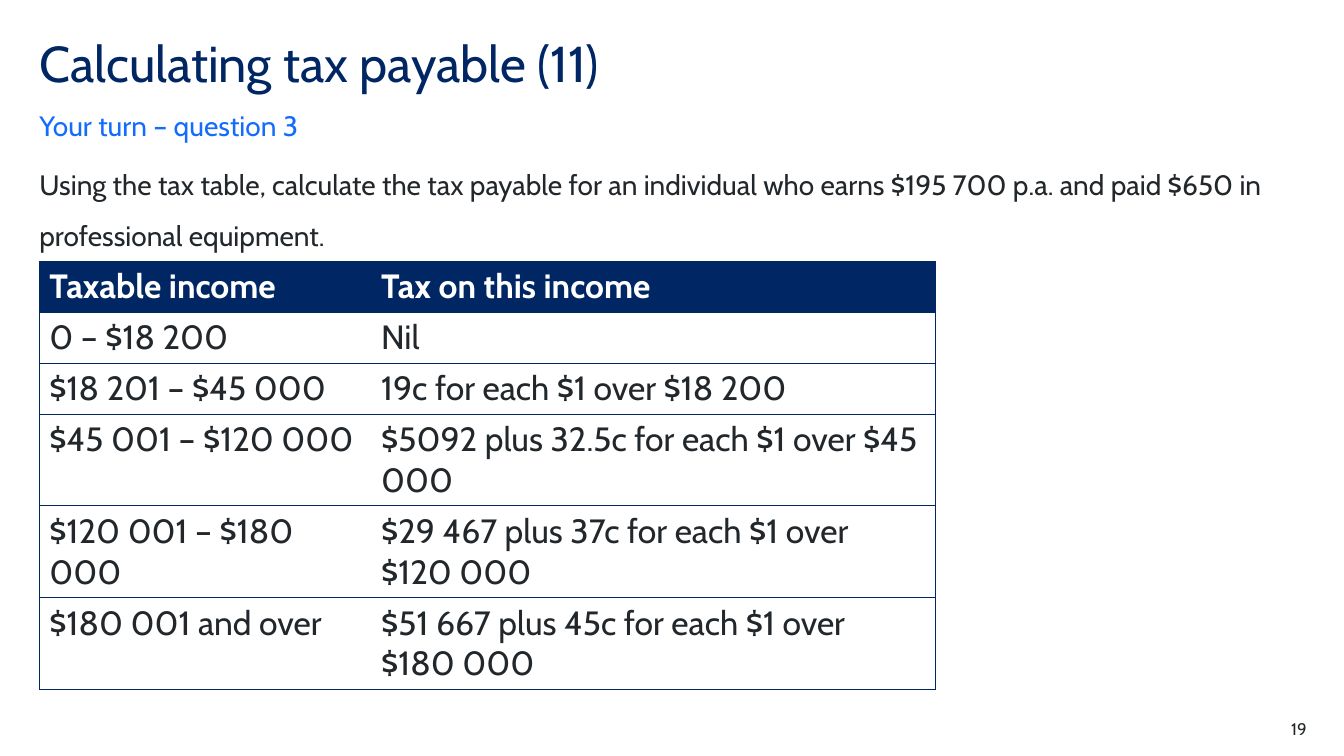
from lxml import etree
from pptx import Presentation
from pptx import util as u
from pptx.dml.color import RGBColor
from pptx.enum import text as t
from pptx.oxml.ns import qn

# Content
TITLE = "Calculating tax payable (11)"
SUBTITLE = "Your turn – question 3"
QUESTION = ("Using the tax table, calculate the tax payable for an individual who earns "
            "$195 700 p.a. and paid $650 in professional equipment.")
TAX_TABLE = [
    ("Taxable income", "Tax on this income"),
    ("0 – $18 200", "Nil"),
    ("$18 201 – $45 000", "19c for each $1 over $18 200"),
    ("$45 001 – $120 000", "$5092 plus 32.5c for each $1 over $45 000"),
    ("$120 001 – $180 000", "$29 467 plus 37c for each $1 over $120 000"),
    ("$180 001 and over", "$51 667 plus 45c for each $1 over $180 000"),
]
PAGE_NUMBER = "19"

# Style
FONT = "Cabin"
NAVY = RGBColor(0x00, 0x26, 0x64)
BLUE = RGBColor(0x14, 0x6C, 0xFD)
INK = RGBColor(0x22, 0x27, 0x2B)
WHITE = RGBColor(0xFF, 0xFF, 0xFF)
LEFT = 0.39
COLUMN_WIDTHS = (3.29, 5.6)
ROW_HEIGHT = 0.41


def write(frame, words, size, color, bold=False, align=t.PP_ALIGN.LEFT, spacing=None):
    paragraph = frame.paragraphs[0]
    paragraph.alignment = align
    if spacing:
        paragraph.line_spacing = spacing
    run = paragraph.add_run()
    run.text = words
    run.font.name = FONT
    run.font.size = u.Pt(size)
    run.font.bold = bold
    run.font.color.rgb = color


def set_up(frame, anchor=t.MSO_ANCHOR.TOP):
    frame.margin_left = frame.margin_right = frame.margin_top = frame.margin_bottom = 0
    frame.word_wrap = True
    frame.auto_size = t.MSO_AUTO_SIZE.NONE
    frame.vertical_anchor = anchor
    return frame


def add_text(slide, box, anchor=t.MSO_ANCHOR.TOP):
    return set_up(slide.shapes.add_textbox(*map(u.Inches, box)).text_frame, anchor)


def set_borders(cell, visible_sides):
    properties = cell._tc.get_or_add_tcPr()
    for position, side in enumerate("LRTB"):
        line = etree.Element(qn(f"a:ln{side}"), w=str(u.Pt(0.5)))
        if side in visible_sides:
            fill = etree.SubElement(line, qn("a:solidFill"))
            etree.SubElement(fill, qn("a:srgbClr"), val=str(NAVY))
        else:
            etree.SubElement(line, qn("a:noFill"))
        properties.insert(position, line)


def add_tax_table(slide):
    table = slide.shapes.add_table(
        len(TAX_TABLE), len(COLUMN_WIDTHS), u.Inches(LEFT), u.Inches(2.59),
        u.Inches(sum(COLUMN_WIDTHS)), u.Inches(ROW_HEIGHT * len(TAX_TABLE))).table
    table.horz_banding = False
    for column, width in zip(table.columns, COLUMN_WIDTHS):
        column.width = u.Inches(width)
    for r, entries in enumerate(TAX_TABLE):
        table.rows[r].height = u.Inches(ROW_HEIGHT)
        header = r == 0
        for c, words in enumerate(entries):
            cell = table.cell(r, c)
            cell.fill.solid()
            cell.fill.fore_color.rgb = NAVY if header else WHITE
            write(cell.text_frame, words, 24, WHITE if header else INK, bold=header)
            set_borders(cell, "LTB" if c == 0 else "RTB")


def main():
    deck = Presentation()
    deck.slide_width, deck.slide_height = u.Inches(13.33), u.Inches(7.5)
    slide = deck.slides.add_slide(deck.slide_layouts[5])

    # Title
    title = slide.shapes.title
    title.left, title.top, title.width, title.height = map(u.Inches, (LEFT, 0.39, 11.02, 0.6))
    write(set_up(title.text_frame), TITLE, 36, NAVY, spacing=0.9)

    # Subtitle and question
    subtitle = add_text(slide, (LEFT, 1.07, 11.02, 0.34), t.MSO_ANCHOR.BOTTOM)
    write(subtitle, SUBTITLE, 20, BLUE)
    question = add_text(slide, (LEFT, 1.5, 12.56, 0.6))
    write(question, QUESTION, 20, INK, spacing=1.5)

    # Tax table
    add_tax_table(slide)

    # Page number
    page_number = add_text(slide, (12.17, 7.13, 0.79, 0.2))
    write(page_number, PAGE_NUMBER, 12, INK, align=t.PP_ALIGN.RIGHT)

    deck.save("out.pptx")


if __name__ == "__main__":
    main()
